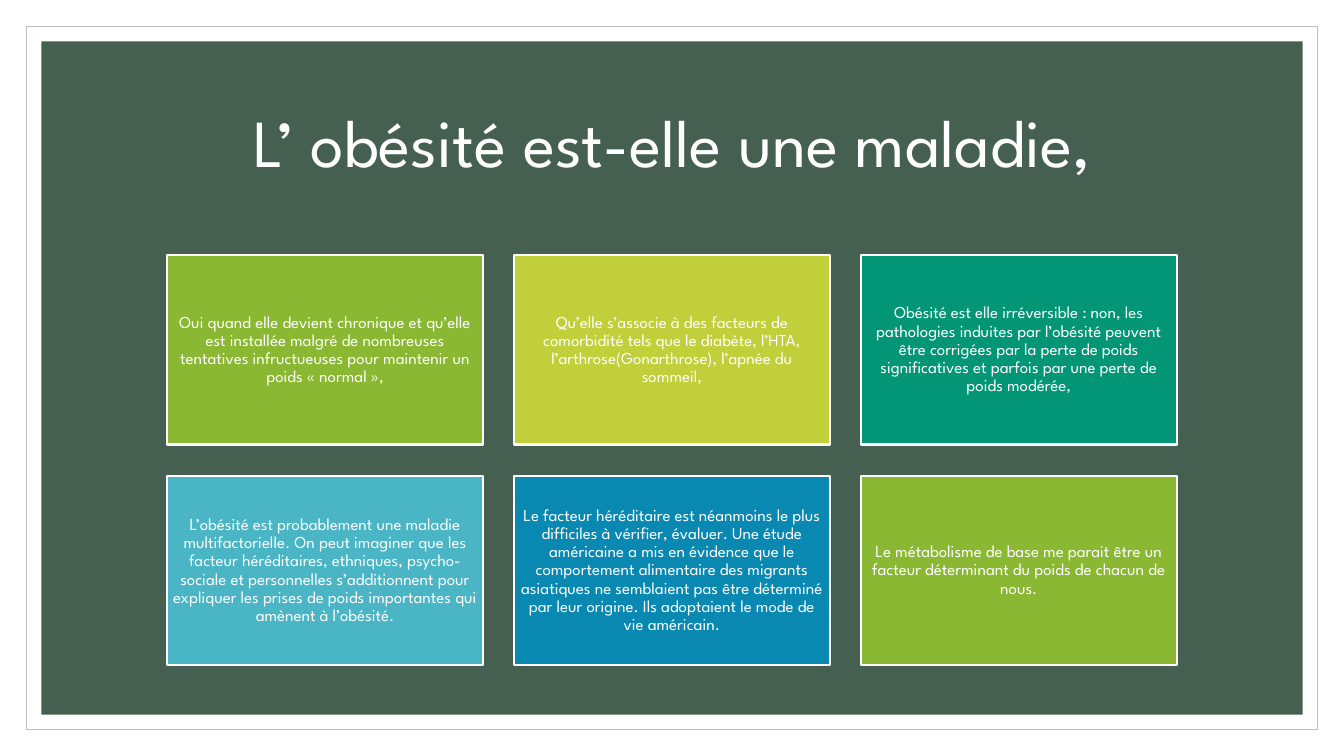
from pptx import Presentation, util as u
from pptx.dml.color import RGBColor
from pptx.enum import shapes, text

# Content
WHITE = RGBColor(0xFF, 0xFF, 0xFF)
GREY = RGBColor(0xBF, 0xBF, 0xBF)
DARK_GREEN = RGBColor(0x45, 0x5F, 0x51)
GREEN = RGBColor(0x8A, 0xB8, 0x33)
LIME = RGBColor(0xC0, 0xCF, 0x3A)
EMERALD = RGBColor(0x02, 0x96, 0x76)
TURQUOISE = RGBColor(0x4A, 0xB5, 0xC4)
BLUE = RGBColor(0x09, 0x89, 0xB1)

TITLE = "L’ obésité est-elle une maladie,"
CARDS = [
    (GREEN, "Oui quand elle devient chronique et qu’elle est installée malgré de "
            "nombreuses tentatives infructueuses pour maintenir un poids « normal »,"),
    (LIME, "Qu’elle s’associe à des facteurs de comorbidité tels que le diabète, "
           "l’HTA, l’arthrose(Gonarthrose), l’apnée du sommeil,"),
    (EMERALD, "Obésité est elle irréversible : non, les pathologies induites par "
              "l’obésité peuvent être corrigées par la perte de poids significatives "
              "et parfois par une perte de poids modérée,"),
    (TURQUOISE, "L’obésité est probablement une maladie multifactorielle. On peut "
                "imaginer que les facteur héréditaires, ethniques, psycho-sociale et "
                "personnelles s’additionnent pour expliquer les prises de poids "
                "importantes qui amènent à l’obésité."),
    (BLUE, "Le facteur héréditaire est néanmoins le plus difficiles à vérifier, "
           "évaluer. Une étude américaine a mis en évidence que le comportement "
           "alimentaire des migrants asiatiques ne semblaient pas être déterminé par "
           "leur origine. Ils adoptaient le mode de vie américain."),
    (GREEN, "Le métabolisme de base me parait être un facteur déterminant du poids "
            "de chacun de nous."),
]

# Layout, in inches
PAGE_WIDTH, PAGE_HEIGHT = 13.33, 7.5
FRAME_MARGIN, PANEL_MARGIN = 0.26, 0.41
TITLE_AREA = (1.17, 0.7, 11, 1.5)
COLUMNS = 3
GRID_LEFT, GRID_TOP = 1.66, 2.53
CARD_WIDTH, CARD_HEIGHT = 3.13, 1.88
GAP = 0.31
INSET = 0.05

TEXT_FORMAT = {"name": "League Spartan"}
PARA_FORMAT = {"alignment": text.PP_ALIGN.CENTER, "line_spacing": 0.9}


def add_rectangle(page, area, fill, line=None, weight=0):
    box = page.shapes.add_shape(shapes.MSO_SHAPE.RECTANGLE, *map(u.Inches, area))
    box.shadow.inherit = False
    box.fill.solid()
    box.fill.fore_color.rgb = fill
    if line is None:
        box.line.fill.background()
    else:
        box.line.color.rgb = line
        box.line.width = u.Pt(weight)
    return box


def write(box, words, size, inset_x, inset_y):
    frame = box.text_frame
    frame_format = {
        "word_wrap": True,
        "vertical_anchor": text.MSO_ANCHOR.MIDDLE,
        "margin_left": u.Inches(inset_x), "margin_right": u.Inches(inset_x),
        "margin_top": u.Inches(inset_y), "margin_bottom": u.Inches(inset_y),
    }
    para = frame.paragraphs[0]
    span = para.add_run()
    span.text = words
    for target, values in ((frame, frame_format), (para, PARA_FORMAT),
                           (span.font, {**TEXT_FORMAT, "size": u.Pt(size)})):
        for name, value in values.items():
            setattr(target, name, value)
    span.font.color.rgb = WHITE


def inner_area(margin):
    return margin, margin, PAGE_WIDTH - 2 * margin, PAGE_HEIGHT - 2 * margin


def main():
    deck = Presentation()
    deck.slide_width = u.Inches(PAGE_WIDTH)
    deck.slide_height = u.Inches(PAGE_HEIGHT)
    page = deck.slides.add_slide(deck.slide_layouts[6])

    # Framed background
    add_rectangle(page, inner_area(FRAME_MARGIN), WHITE, GREY, 0.5)
    add_rectangle(page, inner_area(PANEL_MARGIN), DARK_GREEN)

    # Title
    title = page.shapes.add_textbox(*map(u.Inches, TITLE_AREA))
    write(title, TITLE, 48, 0.1, 0.05)

    # Grid of cards
    for index, (colour, words) in enumerate(CARDS):
        row, column = divmod(index, COLUMNS)
        left = GRID_LEFT + column * (CARD_WIDTH + GAP)
        top = GRID_TOP + row * (CARD_HEIGHT + GAP)
        card = add_rectangle(page, (left, top, CARD_WIDTH, CARD_HEIGHT), colour, WHITE, 1.5)
        write(card, words, 12, INSET, INSET)

    deck.save("out.pptx")


if __name__ == "__main__":
    main()
